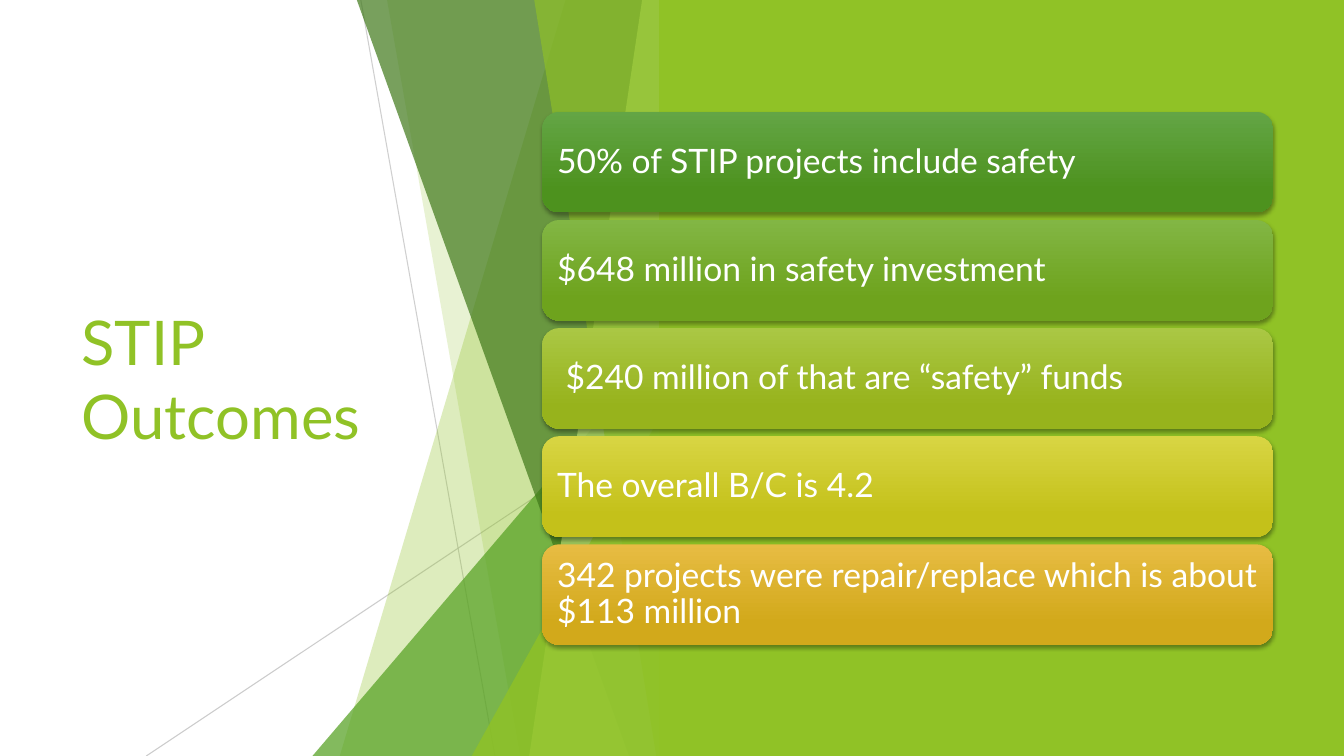
import pptx
import pptx.util
import pptx.dml.color
import pptx.enum.dml
import pptx.enum.shapes
import pptx.enum.text
import pptx.oxml
import pptx.oxml.ns
import lxml.etree

FONT = "Lato"
GREEN = "90C226"
WHITE = "FFFFFF"
TITLE = "STIP Outcomes"
OUTCOMES = [
    ("50% of STIP projects include safety", "63A545", "4D921E"),
    ("$648 million in safety investment", "82B644", "6EA31D"),
    (" $240 million of that are “safety” funds", "AAC744", "97B31C"),
    ("The overall B/C is 4.2", "D8D543", "C4C11A"),
    ("342 projects were repair/replace which is about $113 million", "E7BC43", "D2A91B"),
]

FACET_RIGHT = 49.95
THIN_LINES = [
    ((26.85, 0), (36.83, 100), 75),
    ((FACET_RIGHT, 53.73), (10.88, 100), 80),
]
FACETS = [
    ("band", 42.08, 25.28, GREEN, 30),
    ("band", 28.8, 38.7, GREEN, 20),
    ("triangle", 44.4, 23.25, "54A021", 72),
    ("band", 26.55, 46.8, "3F7819", 70),
    ("band", 47.78, 39.38, "C0E474", 70),
    ("band", 39.75, 48.83, GREEN, 65),
    ("triangle", 52.4, 35.1, GREEN, 80),
]
PANEL_LEFT = 49.05
TITLE_BOX = (5.33, 20.13, 29.1, 59.73)
BAR_LEFT, BAR_TOP, BAR_WIDTH, BAR_HEIGHT, BAR_PITCH = 40.35, 14.8, 54.38, 13.3, 14.3

presentation = pptx.Presentation()
presentation.slide_width = pptx.util.Inches(13.333)
presentation.slide_height = pptx.util.Inches(7.5)
slide = presentation.slides.add_slide(presentation.slide_layouts[6])
shapes = slide.shapes
PRESET = pptx.enum.shapes.MSO_SHAPE


def across(share):
    return round(presentation.slide_width * share / 100)


def down(share):
    return round(presentation.slide_height * share / 100)


def place(left, top, width, height):
    return across(left), down(top), across(width), down(height)


def color(value):
    return pptx.dml.color.RGBColor.from_string(value)


def set_opacity(properties, percent):
    for element in properties.iter(pptx.oxml.ns.qn("a:srgbClr")):
        alpha = lxml.etree.SubElement(element, pptx.oxml.ns.qn("a:alpha"))
        alpha.set("val", str(percent * 1000))


def paint(shape, fill, opacity=100):
    shape.shadow.inherit = False
    shape.line.fill.background()
    shape.fill.solid()
    shape.fill.fore_color.rgb = color(fill)
    if opacity < 100:
        set_opacity(shape.fill._xPr, opacity)


def write(shape, text, size, text_color):
    frame = shape.text_frame
    frame.word_wrap = True
    frame.vertical_anchor = pptx.enum.text.MSO_ANCHOR.MIDDLE
    frame.text = text
    paragraph = frame.paragraphs[0]
    paragraph.alignment = pptx.enum.text.PP_ALIGN.LEFT
    font = paragraph.runs[0].font
    font.name = FONT
    font.size = pptx.util.Pt(size)
    font.color.rgb = color(text_color)
    return frame


def add_thin_line(start, end, opacity):
    line = shapes.add_connector(
        pptx.enum.shapes.MSO_CONNECTOR.STRAIGHT,
        across(start[0]), down(start[1]), across(end[0]), down(end[1]))
    line.line.width = pptx.util.Pt(0.75)
    line.line.color.rgb = color("BFBFBF")
    properties = line._element.spPr
    set_opacity(properties, opacity)
    lxml.etree.SubElement(properties, pptx.oxml.ns.qn("a:effectLst"))


def add_band(top_left, bottom_left):
    builder = shapes.build_freeform(across(top_left), 0)
    builder.add_line_segments([
        (across(FACET_RIGHT), 0),
        (across(FACET_RIGHT), down(100)),
        (across(bottom_left), down(100)),
    ], close=True)
    return builder.convert_to_shape()


def add_triangle(top, left):
    triangle = shapes.add_shape(
        PRESET.ISOSCELES_TRIANGLE, *place(left, top, FACET_RIGHT - left, 100 - top))
    triangle.adjustments[0] = 1
    return triangle


def add_bar(row, text, light, dark):
    bar = shapes.add_shape(
        PRESET.ROUNDED_RECTANGLE,
        *place(BAR_LEFT, BAR_TOP + row * BAR_PITCH, BAR_WIDTH, BAR_HEIGHT))
    bar.shadow.inherit = False
    bar.line.fill.background()
    bar.fill.gradient()
    bar.fill.gradient_angle = 270
    for stop, position, value in zip(bar.fill.gradient_stops, (0, 0.78), (light, dark)):
        stop.position = position
        stop.color.rgb = color(value)
    effects = bar._element.spPr.find(pptx.oxml.ns.qn("a:effectLst"))
    effects.append(pptx.oxml.parse_xml(
        f'<a:outerShdw {pptx.oxml.ns.nsdecls("a")} blurRad="38100" dist="25400" '
        'dir="5400000" rotWithShape="0"><a:srgbClr val="000000">'
        '<a:alpha val="35000"/></a:srgbClr></a:outerShdw>'))
    frame = write(bar, text, 24, WHITE)
    frame.margin_left = frame.margin_right = pptx.util.Inches(0.1)
    frame.margin_top = frame.margin_bottom = pptx.util.Inches(0.1)
    frame.paragraphs[0].line_spacing = 0.9


write(shapes.add_textbox(*place(*TITLE_BOX)), TITLE, 44, GREEN)

for start, end, opacity in THIN_LINES:
    add_thin_line(start, end, opacity)

for kind, first, second, fill, opacity in FACETS:
    add_facet = add_band if kind == "band" else add_triangle
    paint(add_facet(first, second), fill, opacity)

paint(shapes.add_shape(PRESET.RECTANGLE, *place(PANEL_LEFT, 0, 100 - PANEL_LEFT, 100)), GREEN)

for row, outcome in enumerate(OUTCOMES):
    add_bar(row, *outcome)

presentation.save("out.pptx")
